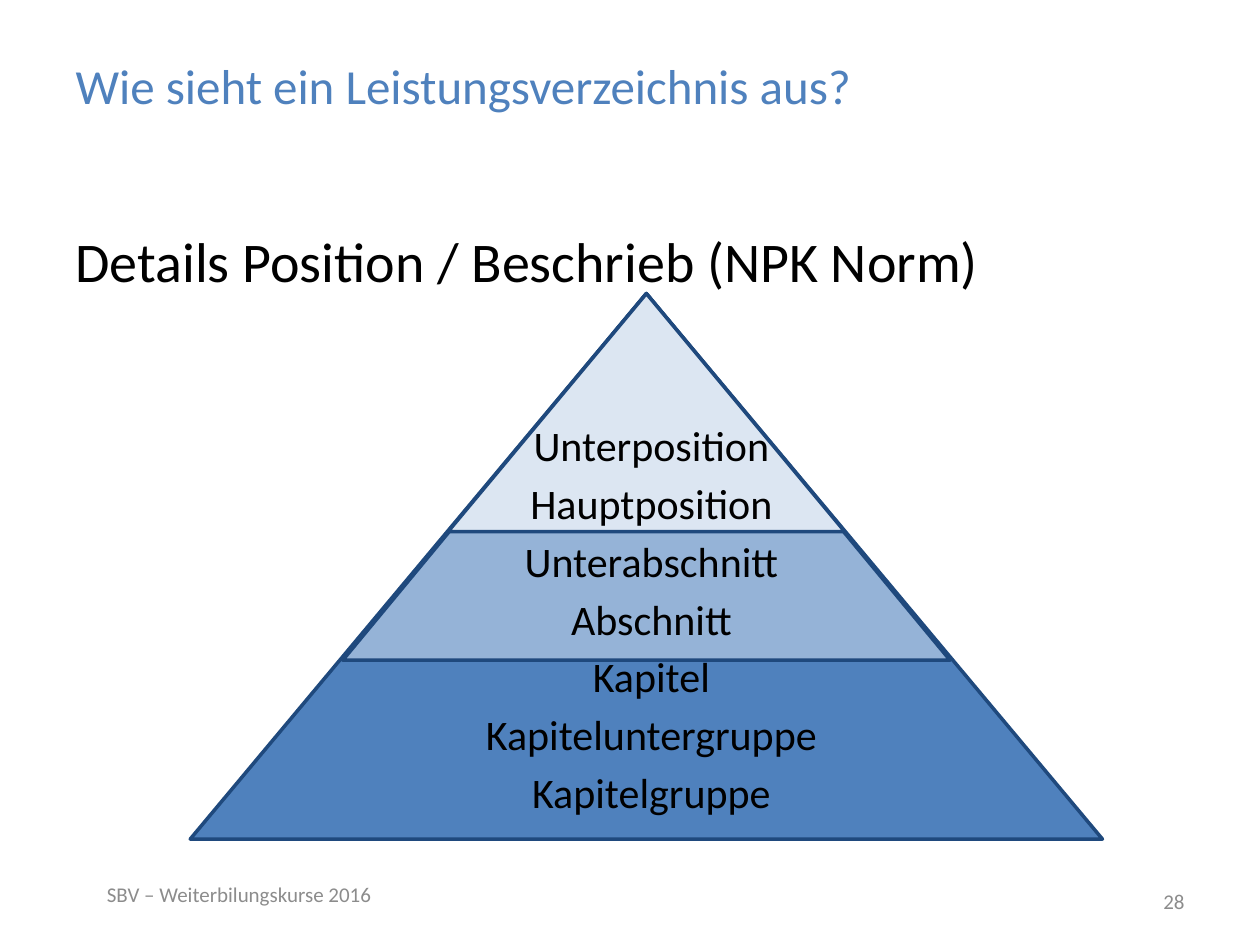
from pptx import Presentation
from pptx.dml.color import RGBColor
from pptx.enum.shapes import MSO_SHAPE as Shape
from pptx.enum.text import MSO_ANCHOR as Anchor, PP_ALIGN as Align
from pptx.util import Inches, Pt

APEX_X, APEX_Y = 5.13, 2.33
TIERS = [(7.24, 4.33, "4F81BD"), (4.82, 2.91, "95B3D7"), (3.15, 1.89, "DCE6F2")]
LEVELS = ["Unterposition", "Hauptposition", "Unterabschnitt", "Abschnitt",
          "Kapitel", "Kapiteluntergruppe", "Kapitelgruppe"]


def rgb(value):
    """Return the colour for a hex string."""
    return RGBColor.from_string(value)


def write_lines(frame, lines, size, color, align=Align.LEFT, anchor=Anchor.TOP, gap=0):
    """Fill a text frame with one formatted paragraph per line."""
    frame.word_wrap = True
    frame.vertical_anchor = anchor
    for index, line in enumerate(lines):
        paragraph = frame.add_paragraph() if index else frame.paragraphs[0]
        paragraph.text = line
        paragraph.alignment = align
        paragraph.space_before = Pt(gap if index else 0)
        paragraph.font.name = "Calibri"
        paragraph.font.size = Pt(size)
        paragraph.font.color.rgb = rgb(color)


def set_title(slide, text):
    """Place and format the title placeholder."""
    title = slide.shapes.title
    title.left, title.top = Inches(0.5), Inches(0.05)
    title.width, title.height = Inches(9), Inches(1.25)
    write_lines(title.text_frame, [text], 28, "4F81BD", anchor=Anchor.MIDDLE)


def add_text(slide, left, top, width, height, lines, size, color="000000", **layout):
    """Add a text box."""
    box = slide.shapes.add_textbox(Inches(left), Inches(top), Inches(width), Inches(height))
    write_lines(box.text_frame, lines, size, color, **layout)


def add_tier(slide, width, height, color):
    """Add a triangle that hangs from the common apex."""
    tier = slide.shapes.add_shape(Shape.ISOSCELES_TRIANGLE, Inches(APEX_X - width / 2),
                                  Inches(APEX_Y), Inches(width), Inches(height))
    tier.shadow.inherit = False
    tier.fill.solid()
    tier.fill.fore_color.rgb = rgb(color)
    tier.line.color.rgb = rgb("1F497D")
    tier.line.width = Pt(2)


def main():
    """Build the slide and save it."""
    deck = Presentation()
    deck.slide_width, deck.slide_height = Inches(10), Inches(7.5)
    slide = deck.slides.add_slide(deck.slide_layouts[5])
    set_title(slide, "Wie sieht ein Leistungsverzeichnis aus?")
    add_text(slide, 0.5, 1.75, 9, 0.65, ["Details Position / Beschrieb (NPK Norm)"], 32)
    for width, height, color in TIERS:
        add_tier(slide, width, height, color)
    add_text(slide, 0.67, 3.28, 9, 3.59, LEVELS, 24, align=Align.CENTER, gap=4.25)
    add_text(slide, 0.75, 6.9, 2.33, 0.4, ["SBV – Weiterbilungskurse 2016"], 12, "8C8C8C",
             anchor=Anchor.MIDDLE)
    add_text(slide, 7.17, 6.95, 2.33, 0.4, ["28"], 12, "8C8C8C",
             align=Align.RIGHT, anchor=Anchor.MIDDLE)
    deck.save("out.pptx")


if __name__ == "__main__":
    main()
